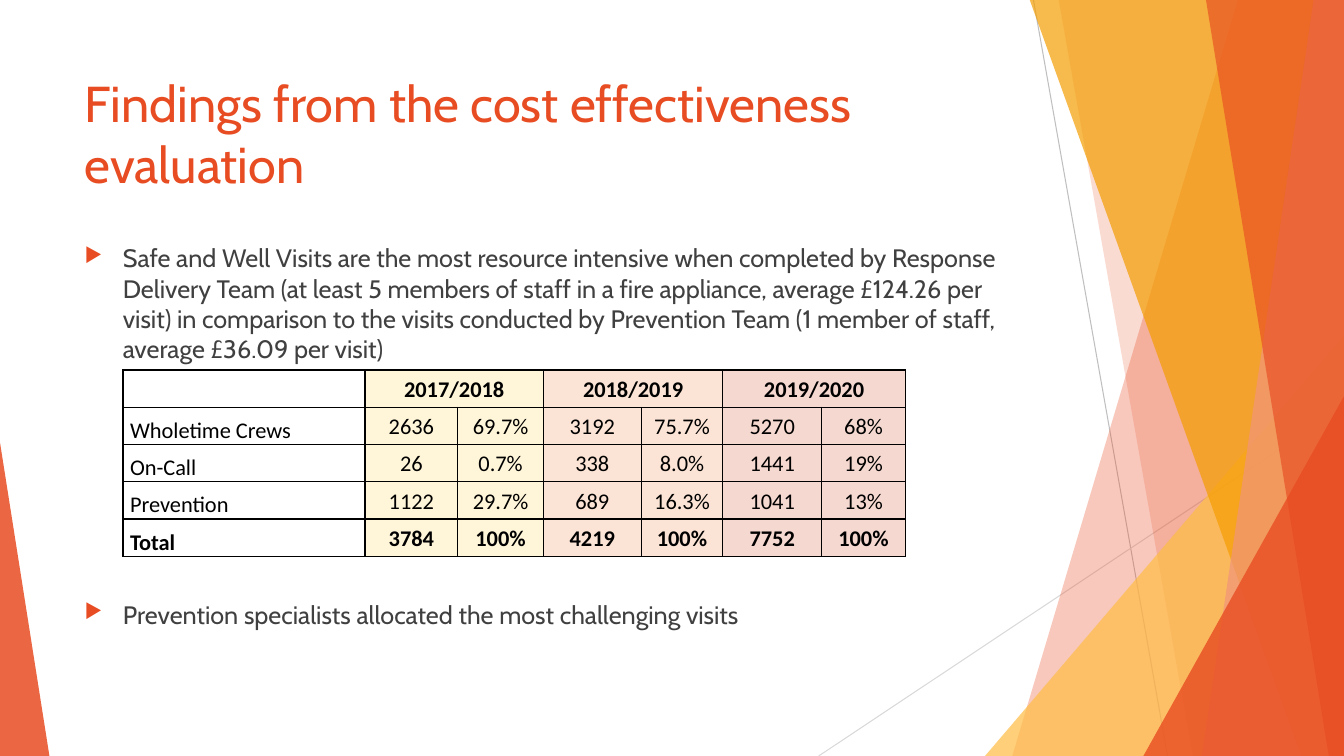
from lxml import etree
from pptx import Presentation
from pptx import util as u
from pptx.dml.color import RGBColor
from pptx.enum import shapes, text
from pptx.oxml import ns

PX = 9144  # EMU per px, 100 px to the inch

BLACK = RGBColor(0x00, 0x00, 0x00)
BODY_GREY = RGBColor(0x40, 0x40, 0x40)
MID_GREY = RGBColor(0xBF, 0xBF, 0xBF)
PALE_GREY = RGBColor(0xD9, 0xD9, 0xD9)
RED = RGBColor(0xE8, 0x4C, 0x22)
YELLOW = RGBColor(0xFF, 0xBD, 0x47)
AMBER = RGBColor(0xF4, 0x9D, 0x00)
SALMON = RGBColor(0xF1, 0x94, 0x7A)
YEAR_FILLS = [
    RGBColor(0xFF, 0xF6, 0xD9),
    RGBColor(0xFB, 0xE4, 0xD5),
    RGBColor(0xF5, 0xD8, 0xCF),
]

YEARS = ["2017/2018", "2018/2019", "2019/2020"]
VISITS = [
    ["Wholetime Crews", "2636", "69.7%", "3192", "75.7%", "5270", "68%"],
    ["On-Call", "26", "0.7%", "338", "8.0%", "1441", "19%"],
    ["Prevention", "1122", "29.7%", "689", "16.3%", "1041", "13%"],
    ["Total", "3784", "100%", "4219", "100%", "7752", "100%"],
]
COLUMN_WIDTHS = [240, 92, 85, 97, 81, 98, 83]
ROW_HEIGHT = 37


def add_xml(parent, tag, **attributes):
    return etree.SubElement(parent, ns.qn(tag), attributes)


class VisitSlide:
    heading_font = "Cabin"
    table_font = "Calibri"

    def __init__(self, presentation):
        self.slide = presentation.slides.add_slide(presentation.slide_layouts[6])
        self.shapes = self.slide.shapes

    def hairline(self, start, end, color):
        line = self.shapes.add_connector(
            shapes.MSO_CONNECTOR.STRAIGHT, *(v * PX for v in start + end))
        line.line.color.rgb = color
        line.line.width = u.Pt(0.75)
        add_xml(line._element.spPr, "a:effectLst")

    def tint(self, shape, color, opacity):
        """Fill without outline or shadow; opacity is in percent."""
        shape.shadow.inherit = False
        shape.line.fill.background()
        shape.fill.solid()
        shape.fill.fore_color.rgb = color
        rgb = shape._element.spPr.find(ns.qn("a:solidFill"))[0]
        add_xml(rgb, "a:alpha", val=str(opacity * 1000))

    def band(self, top_x, bottom_x, color, opacity):
        """Full-height panel from a slanted left side to the slide's right edge."""
        outline = self.shapes.build_freeform(top_x, -1, scale=PX)
        outline.add_line_segments([(1333, -1), (1333, 750), (bottom_x, 750)])
        self.tint(outline.convert_to_shape(), color, opacity)

    def corner(self, left, top, width, apex, color, opacity):
        """Triangle standing on the slide's bottom edge; apex 0 is left, 1 right."""
        triangle = self.shapes.add_shape(
            shapes.MSO_SHAPE.ISOSCELES_TRIANGLE,
            left * PX, top * PX, width * PX, (750 - top) * PX)
        triangle.adjustments[0] = apex
        self.tint(triangle, color, opacity)

    def run(self, paragraph, wording, font, size, color, bold=False):
        run = paragraph.add_run()
        run.text = wording
        run.font.name = font
        run.font.size = u.Pt(size)
        run.font.bold = bold
        run.font.color.rgb = color

    def text_frame(self, left, top, width, height):
        box = self.shapes.add_textbox(left * PX, top * PX, width * PX, height * PX)
        box.text_frame.word_wrap = True
        return box.text_frame

    def title(self, wording):
        frame = self.text_frame(74, 67, 940, 144)
        self.run(frame.paragraphs[0], wording, self.heading_font, 36, RED)

    def bullets(self, items):
        """Items are pairs of wording and space before in points."""
        frame = self.text_frame(74, 236, 940, 424)
        for index, (wording, space) in enumerate(items):
            point = frame.add_paragraph() if index else frame.paragraphs[0]
            point.space_before = u.Pt(space)
            properties = point._p.get_or_add_pPr()
            properties.set("marL", str(38 * PX))
            properties.set("indent", str(-38 * PX))
            bullet_color = add_xml(properties, "a:buClr")
            add_xml(bullet_color, "a:srgbClr", val=str(RED))
            add_xml(properties, "a:buSzPct", val="80000")
            add_xml(properties, "a:buChar", char="▶")
            self.run(point, wording, self.heading_font, 18, BODY_GREY)

    def cell(self, cell, wording, fill, bold):
        """Style one cell; without a fill it is a row label."""
        properties = cell._tc.get_or_add_tcPr()
        for side in ("a:lnL", "a:lnR", "a:lnT", "a:lnB"):
            border = add_xml(properties, side, w=str(u.Pt(1)))
            add_xml(add_xml(border, "a:solidFill"), "a:srgbClr", val=str(BLACK))
        cell.margin_left = cell.margin_right = 7 * PX
        cell.margin_top = cell.margin_bottom = 0
        paragraph = cell.text_frame.paragraphs[0]
        paragraph.line_spacing = 1.07
        if fill is None:
            cell.fill.background()
            cell.vertical_anchor = text.MSO_ANCHOR.BOTTOM
            paragraph.alignment = text.PP_ALIGN.JUSTIFY
        else:
            cell.fill.solid()
            cell.fill.fore_color.rgb = fill
            cell.vertical_anchor = text.MSO_ANCHOR.MIDDLE
            paragraph.alignment = text.PP_ALIGN.CENTER
        if wording:
            self.run(paragraph, wording, self.table_font, 16, BLACK, bold)

    def table(self, left, top, years, rows):
        header = [""]
        for year in years:
            header += [year, ""]
        rows = [header] + rows
        table = self.shapes.add_table(
            len(rows), len(header), left * PX, top * PX,
            sum(COLUMN_WIDTHS) * PX, ROW_HEIGHT * len(rows) * PX).table
        table.first_row = table.horz_banding = False
        for column, width in zip(table.columns, COLUMN_WIDTHS):
            column.width = width * PX
        for r, row in enumerate(rows):
            table.rows[r].height = ROW_HEIGHT * PX
            for c, wording in enumerate(row):
                fill = YEAR_FILLS[(c - 1) // 2] if c else None
                self.cell(table.cell(r, c), wording, fill, r in (0, len(rows) - 1))
        for c in range(1, len(header), 2):
            table.cell(0, c).merge(table.cell(0, c + 1))


def main():
    presentation = Presentation()
    presentation.slide_width = 1333 * PX
    presentation.slide_height = 750 * PX
    findings = VisitSlide(presentation)

    findings.hairline((1025, 0), (1158, 750), MID_GREY)
    findings.hairline((1333, 403), (812, 750), PALE_GREY)
    findings.band(1228, 1004, RED, 30)
    findings.band(1050, 1183, RED, 20)
    findings.corner(977, 333, 356, 1, YELLOW, 72)
    findings.band(1021, 1291, AMBER, 70)
    findings.band(1303, 1192, SALMON, 70)
    findings.band(1196, 1318, RED, 65)
    findings.corner(1134, 393, 199, 1, RED, 80)
    findings.corner(0, 439, 49, 0, RED, 85)

    findings.title("Findings from the cost effectiveness evaluation")
    findings.bullets([
        ("Safe and Well Visits are the most resource intensive when completed by "
         "Response Delivery Team (at least 5 members of staff in a fire appliance, "
         "average £124.26 per visit) in comparison to the visits conducted by "
         "Prevention Team (1 member of staff, average £36.09 per visit)", 10),
        ("Prevention specialists allocated the most challenging visits", 168),
    ])
    findings.table(122, 367, YEARS, VISITS)
    presentation.save("out.pptx")


if __name__ == "__main__":
    main()
